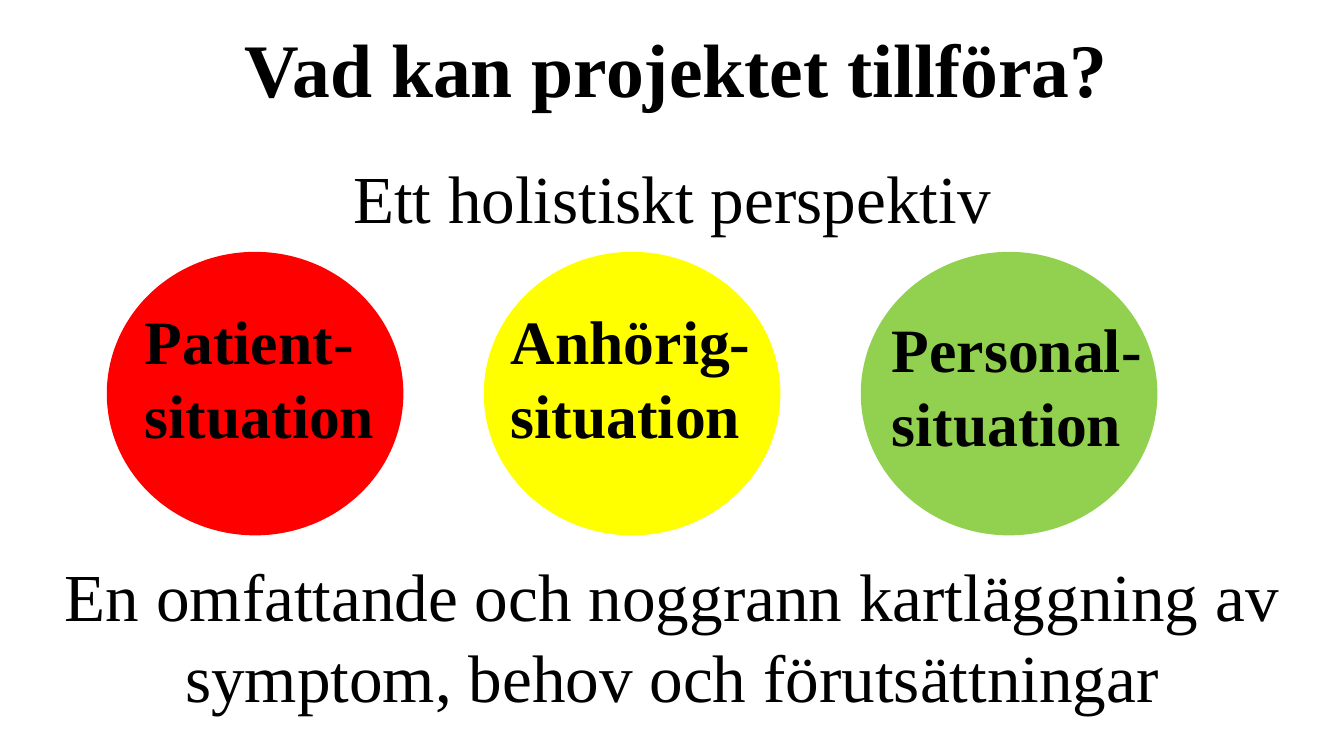
"""Builds a slide with three situation circles between a heading and a summary."""
from dataclasses import dataclass

from pptx import Presentation
from pptx.dml.color import RGBColor
from pptx.enum.shapes import MSO_SHAPE as Preset
from pptx.enum.text import MSO_ANCHOR as Anchor
from pptx.enum.text import MSO_AUTO_SIZE as AutoSize
from pptx.enum.text import PP_ALIGN as Align
from pptx.slide import Slide
from pptx.util import Inches, Pt

SLIDE_WIDTH = Inches(13.333)
SLIDE_HEIGHT = Inches(7.5)
FONT = "Times New Roman"
BLACK = RGBColor(0x00, 0x00, 0x00)
RED = RGBColor(0xFF, 0x00, 0x00)
YELLOW = RGBColor(0xFF, 0xFF, 0x00)
GREEN = RGBColor(0x92, 0xD0, 0x50)


@dataclass(frozen=True)
class Area:
    """Holds a rectangle in percent of the slide's width and height."""
    left: float
    top: float
    width: float
    height: float

    def lengths(self) -> tuple[int, int, int, int]:
        return (
            int(SLIDE_WIDTH * self.left / 100),
            int(SLIDE_HEIGHT * self.top / 100),
            int(SLIDE_WIDTH * self.width / 100),
            int(SLIDE_HEIGHT * self.height / 100),
        )


@dataclass(frozen=True)
class TextBlock:
    area: Area
    lines: tuple[str, ...]
    size: int
    bold: bool = False
    align: Align = Align.CENTER
    anchor: Anchor = Anchor.TOP
    spacing: float = 1.0
    wrap: bool = True
    auto_size: AutoSize = AutoSize.SHAPE_TO_FIT_TEXT


@dataclass(frozen=True)
class Situation:
    color: RGBColor
    first_line: str
    label_area: Area


CIRCLE = Area(8.18, 33.73, 21.6, 36.67)
CIRCLE_PITCH = 28.05

SITUATIONS = (
    Situation(RED, "Patient-", Area(10.05, 39.47, 18.75, 21.07)),
    Situation(YELLOW, "Anhörig-", Area(37.28, 39.47, 19.5, 21.07)),
    Situation(GREEN, "Personal-", Area(65.63, 40.53, 20.25, 21.07)),
)

TITLE = TextBlock(
    Area(7.2, 0, 86.25, 19.33), ("Vad kan projektet tillföra?",), 54, bold=True,
    anchor=Anchor.MIDDLE, spacing=0.9, auto_size=AutoSize.NONE,
)
SUMMARY = TextBlock(
    Area(-2.18, 72.67, 104.4, 22.93),
    ("En omfattande och noggrann kartläggning av symptom, behov och förutsättningar",), 48,
)
PERSPECTIVE = TextBlock(Area(-2.18, 20, 104.4, 12.13), ("Ett holistiskt perspektiv",), 48)


def draw_text(slide: Slide, block: TextBlock) -> None:
    frame = slide.shapes.add_textbox(*block.area.lengths()).text_frame
    frame.word_wrap = block.wrap
    frame.auto_size = block.auto_size
    frame.vertical_anchor = block.anchor
    frame.text = "\n".join(block.lines)
    for paragraph in frame.paragraphs:
        paragraph.alignment = block.align
        paragraph.line_spacing = block.spacing
        paragraph.font.name = FONT
        paragraph.font.size = Pt(block.size)
        paragraph.font.bold = block.bold
        paragraph.font.color.rgb = BLACK


def draw_circle(slide: Slide, column: int, color: RGBColor) -> None:
    left = CIRCLE.left + column * CIRCLE_PITCH
    area = Area(left, CIRCLE.top, CIRCLE.width, CIRCLE.height)
    circle = slide.shapes.add_shape(Preset.OVAL, *area.lengths())
    circle.shadow.inherit = False
    circle.fill.solid()
    circle.fill.fore_color.rgb = color
    circle.line.color.rgb = color
    circle.line.width = Pt(4.5)


def main() -> None:
    presentation = Presentation()
    presentation.slide_width = SLIDE_WIDTH
    presentation.slide_height = SLIDE_HEIGHT
    slide = presentation.slides.add_slide(presentation.slide_layouts[6])

    draw_text(slide, TITLE)
    for column, situation in enumerate(SITUATIONS):
        draw_circle(slide, column, situation.color)
    for situation in SITUATIONS:
        lines = (situation.first_line, "situation")
        draw_text(slide, TextBlock(
            situation.label_area, lines, 44, bold=True, align=Align.LEFT, wrap=False))
    for block in (SUMMARY, PERSPECTIVE):
        draw_text(slide, block)

    presentation.save("out.pptx")


if __name__ == "__main__":
    main()
